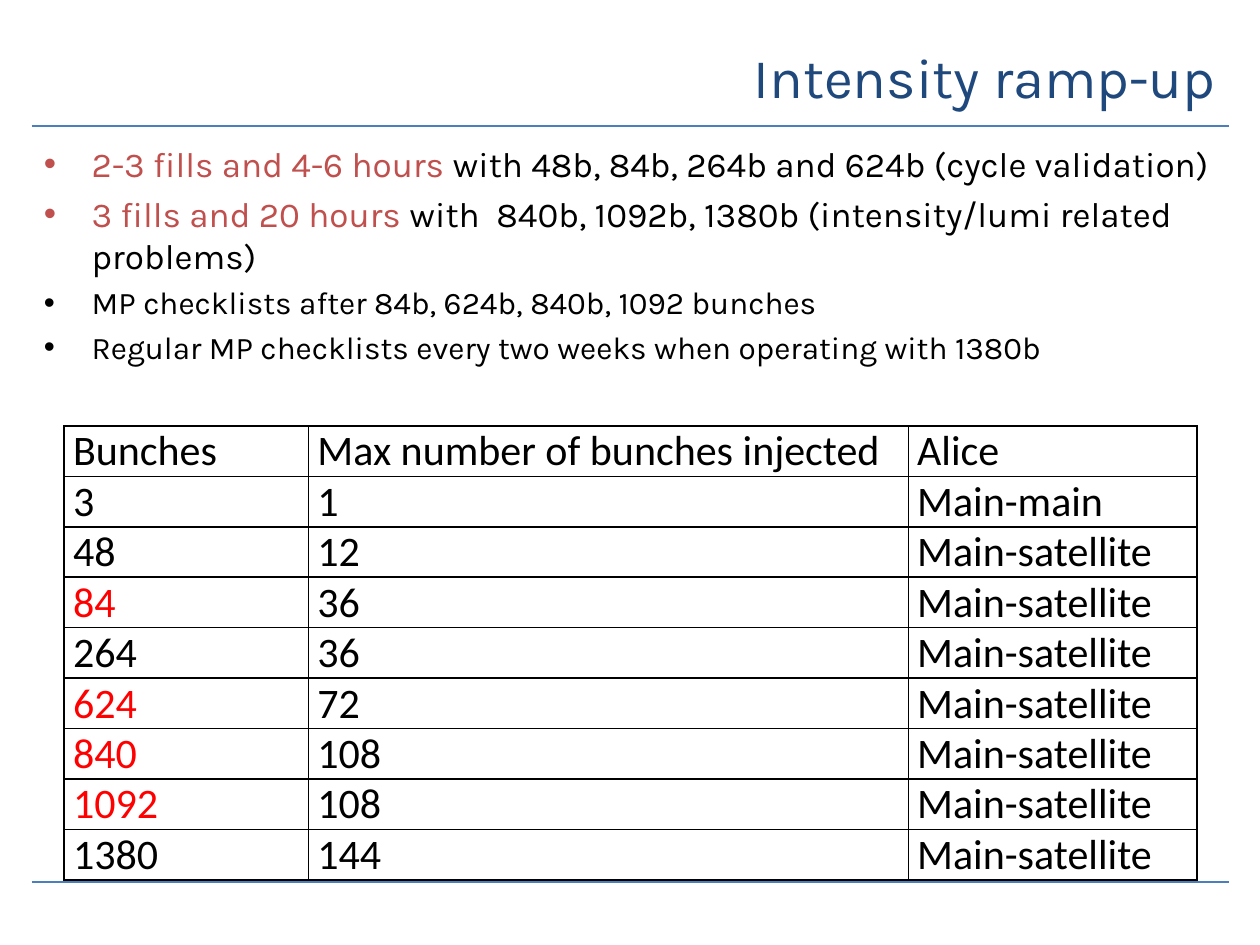
from dataclasses import dataclass
from typing import Any

from lxml import etree
from pptx import Presentation
from pptx import util as u
from pptx.dml import color
from pptx.enum import shapes, text
from pptx.oxml import ns

WIDTH, HEIGHT = 10, 7.5
COLOURS = {
    "rule": "4B7EBC",
    "title": "1F497D",
    "accent": "C0504D",
    "ink": "000000",
    "alert": "FF0000",
}
RULE_ENDS = (0.025, 0.975)
RULE_ROWS = (1 / HEIGHT, 7 / HEIGHT)
COLUMN_WIDTHS = (0.194, 0.476, 0.229)
ROW_HEIGHT = 0.4 / HEIGHT
HEADINGS = ("Bunches", "Max number of bunches injected", "Alice")
STEPS = {3: 1, 48: 12, 84: 36, 264: 36, 624: 72, 840: 108, 1092: 108, 1380: 144}
CHECKLIST_STEPS = {84, 624, 840, 1092}


@dataclass(frozen=True)
class Area:
    left: float
    top: float
    width: float
    height: float

    def lengths(self) -> tuple[int, int, int, int]:
        return across(self.left), down(self.top), across(self.width), down(self.height)


@dataclass(frozen=True)
class Bullet:
    lead: str
    rest: str
    size: float
    space_before: float


BULLETS = (
    Bullet("2-3 fills and 4-6 hours ", "with 48b, 84b, 264b and 624b (cycle validation)", 20, 0),
    Bullet("3 fills and 20 hours ", "with  840b, 1092b, 1380b (intensity/lumi related problems)", 20, 4.5),
    Bullet("", "MP checklists after 84b, 624b, 840b, 1092 bunches", 18, 4),
    Bullet("", "Regular MP checklists every two weeks when operating with 1380b", 18, 4),
)


def across(share: float) -> int:
    return u.Inches(share * WIDTH)


def down(share: float) -> int:
    return u.Inches(share * HEIGHT)


def apply(target: Any, values: dict[str, Any]) -> None:
    for name, value in values.items():
        setattr(target, name, value)


def add_run(paragraph: Any, words: str, size: float, colour: str, font: str = "Karla") -> None:
    run = paragraph.add_run()
    run.text = words
    apply(run.font, {"name": font, "size": u.Pt(size), "bold": False})
    run.font.color.rgb = color.RGBColor.from_string(COLOURS[colour])


def add_text_area(slide: Any, area: Area, anchor: Any) -> Any:
    frame = slide.shapes.add_textbox(*area.lengths()).text_frame
    apply(frame, {"word_wrap": True, "vertical_anchor": anchor})
    return frame


def draw_rule(slide: Any, row: float) -> None:
    start, end = RULE_ENDS
    rule = slide.shapes.add_connector(
        shapes.MSO_CONNECTOR.STRAIGHT, across(start), down(row), across(end), down(row)
    )
    rule.line.width = u.Pt(1.5)
    rule.line.color.rgb = color.RGBColor.from_string(COLOURS["rule"])
    etree.SubElement(rule._element.spPr, ns.qn("a:effectLst"))


def draw_title(slide: Any, area: Area) -> None:
    paragraph = add_text_area(slide, area, text.MSO_ANCHOR.MIDDLE).paragraphs[0]
    paragraph.alignment = text.PP_ALIGN.RIGHT
    add_run(paragraph, "Intensity ramp-up", 32, "title")


def draw_bullets(slide: Any, area: Area) -> None:
    frame = add_text_area(slide, area, text.MSO_ANCHOR.TOP)
    indent = u.Inches(0.38)
    for index, bullet in enumerate(BULLETS):
        paragraph = frame.add_paragraph() if index else frame.paragraphs[0]
        properties = paragraph._p.get_or_add_pPr()
        properties.set("marL", str(indent))
        properties.set("indent", str(-indent))
        etree.SubElement(properties, ns.qn("a:buFont"), typeface="Arial")
        etree.SubElement(properties, ns.qn("a:buChar"), char="•")
        paragraph.space_before = u.Pt(bullet.space_before)
        if bullet.lead:
            add_run(paragraph, bullet.lead, bullet.size, "accent")
        add_run(paragraph, bullet.rest, bullet.size, "ink")


def outline_cell(cell: Any) -> None:
    properties = cell._tc.get_or_add_tcPr()
    for position, side in enumerate(("lnL", "lnR", "lnT", "lnB")):
        border = etree.Element(ns.qn(f"a:{side}"), w=str(u.Pt(1)))
        fill = etree.SubElement(border, ns.qn("a:solidFill"))
        etree.SubElement(fill, ns.qn("a:srgbClr"), val=COLOURS["ink"])
        properties.insert(position, border)


def fill_cell(cell: Any, words: str, colour: str) -> None:
    inset = u.Inches(0.07)
    apply(cell, {"margin_left": inset, "margin_right": inset, "margin_top": 0, "margin_bottom": 0})
    cell.fill.background()
    outline_cell(cell)
    add_run(cell.text_frame.paragraphs[0], words, 24, colour, "Calibri")


def draw_table(slide: Any, left: float, top: float) -> None:
    rows = [HEADINGS] + [
        (str(bunches), str(injected), "Main-main" if bunches == 3 else "Main-satellite")
        for bunches, injected in STEPS.items()
    ]
    alerts = {str(bunches) for bunches in CHECKLIST_STEPS}
    area = Area(left, top, sum(COLUMN_WIDTHS), ROW_HEIGHT * len(rows))
    table = slide.shapes.add_table(len(rows), len(HEADINGS), *area.lengths()).table
    apply(table, {"first_row": False, "horz_banding": False})
    for column, share in zip(table.columns, COLUMN_WIDTHS):
        column.width = across(share)
    for row, values in zip(table.rows, rows):
        row.height = down(ROW_HEIGHT)
        for index, (cell, words) in enumerate(zip(row.cells, values)):
            fill_cell(cell, words, "alert" if index == 0 and words in alerts else "ink")


def main() -> None:
    presentation = Presentation()
    apply(presentation, {"slide_width": across(1), "slide_height": down(1)})
    slide = presentation.slides.add_slide(presentation.slide_layouts[6])
    for row in RULE_ROWS:
        draw_rule(slide, row)
    draw_bullets(slide, Area(0.025, 1.08 / HEIGHT, 0.95, 5.75 / HEIGHT))
    draw_title(slide, Area(0.175, 0.17 / HEIGHT, 0.8, 0.87 / HEIGHT))
    draw_table(slide, 0.051, 3.38 / HEIGHT)
    presentation.save("out.pptx")


if __name__ == "__main__":
    main()
